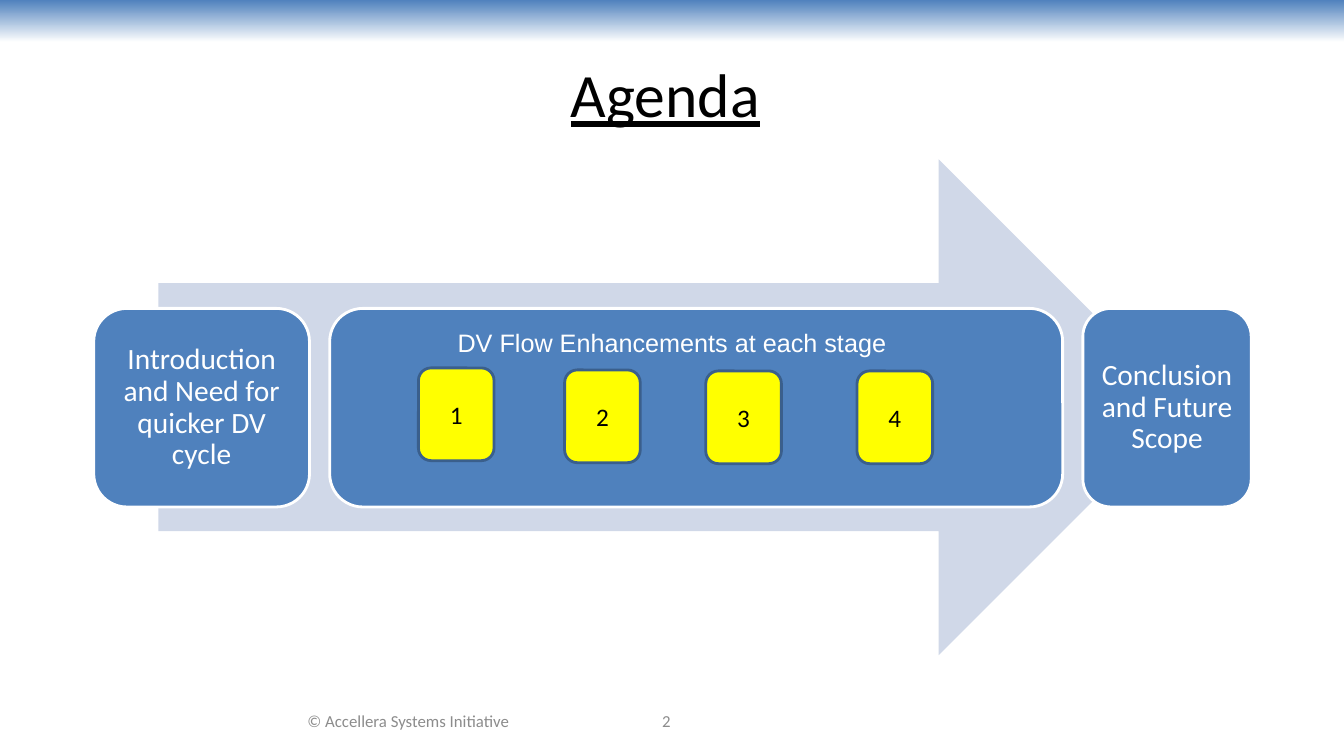
"""Build the agenda slide: a process arrow with three stages and four numbered steps."""
from dataclasses import dataclass

from pptx import Presentation
from pptx.dml.color import RGBColor
from pptx.enum.shapes import MSO_SHAPE as Shape
from pptx.enum.text import MSO_ANCHOR as Anchor, PP_ALIGN as Align
from pptx.util import Emu, Pt

PX = 9144
BLUE, WHITE, BLACK, GREY = "4F81BD", "FFFFFF", "000000", "8C8C8C"
PALE, YELLOW, NAVY = "D0D8E8", "FFFF00", "3A5F8C"


@dataclass
class TextStyle:
    """Look of a single paragraph."""
    size: int
    color: str
    font: str = "Calibri"
    align: Align = Align.CENTER
    anchor: Anchor = Anchor.MIDDLE
    underline: bool = False
    spacing: float = 1.0


@dataclass
class Box:
    """Filled preset shape, placed in px."""
    left: int
    top: int
    width: int
    height: int
    fill: str
    line: str = ""
    text: str = ""
    kind: Shape = Shape.ROUNDED_RECTANGLE


@dataclass
class Label:
    """Free-standing text, placed in px."""
    left: int
    top: int
    width: int
    height: int
    text: str
    style: TextStyle


STAGE = TextStyle(21, WHITE, spacing=0.9)
STEP = TextStyle(18, BLACK)
FOOTER = TextStyle(12, GREY)

ARROW = Box(157, 158, 1020, 492, PALE, kind=Shape.RIGHT_ARROW)
STAGES = [
    Box(left, 306, width, 197, BLUE, WHITE, text)
    for left, width, text in (
        (93, 214, "Introduction and Need for quicker DV cycle"),
        (327, 727, ""),
        (1074, 167, "Conclusion and Future Scope"),
    )
]
STEPS = [
    Box(left, top, 75, 92, YELLOW, NAVY, str(number))
    for number, (left, top) in enumerate(
        ((415, 365), (560, 367), (700, 368), (850, 368)), start=1)
]
LABELS = [
    Label(60, 30, 1200, 125, "Agenda", TextStyle(44, BLACK, underline=True)),
    Label(244, 695, 322, 40, "© Accellera Systems Initiative", FOOTER),
    Label(533, 695, 256, 40, "2", FOOTER),
    Label(444, 320, 460, 40, "DV Flow Enhancements at each stage",
          TextStyle(18, WHITE, "Arial", Align.LEFT, Anchor.TOP)),
]


def px(value: int) -> Emu:
    """Turn px into EMU."""
    return Emu(value * PX)


def rgb(color: str) -> RGBColor:
    """Turn a hex string into a colour."""
    return RGBColor.from_string(color)


def write(tf, text: str, style: TextStyle) -> None:
    """Fill a text frame with one styled paragraph."""
    tf.word_wrap = True
    tf.vertical_anchor = style.anchor
    tf.text = text
    p = tf.paragraphs[0]
    p.alignment = style.align
    p.line_spacing = style.spacing
    font = p.runs[0].font
    font.name, font.size = style.font, Pt(style.size)
    font.color.rgb = rgb(style.color)
    font.underline = style.underline


def add_box(s, box: Box, style: TextStyle = STAGE, inset: int = 9):
    """Draw a box with its text and return it."""
    sp = s.shapes.add_shape(box.kind, px(box.left), px(box.top),
                            px(box.width), px(box.height))
    sp.shadow.inherit = False
    sp.fill.solid()
    sp.fill.fore_color.rgb = rgb(box.fill)
    if box.line:
        sp.line.color.rgb = rgb(box.line)
        sp.line.width = Pt(2)
    else:
        sp.line.fill.background()
    if box.text:
        tf = sp.text_frame
        tf.margin_left = tf.margin_right = px(inset)
        tf.margin_top = tf.margin_bottom = px(inset)
        write(tf, box.text, style)
    return sp


def add_label(s, label: Label) -> None:
    """Draw a text box."""
    sp = s.shapes.add_textbox(px(label.left), px(label.top),
                              px(label.width), px(label.height))
    write(sp.text_frame, label.text, label.style)


def add_banner(s) -> None:
    """Draw the band that fades from blue to white along the top edge."""
    sp = add_box(s, Box(0, 0, 1333, 42, BLUE, kind=Shape.RECTANGLE))
    sp.fill.gradient()
    sp.fill.gradient_angle = 270
    for stop, position, color in zip(sp.fill.gradient_stops, (0, 1), (BLUE, WHITE)):
        stop.position = position
        stop.color.rgb = rgb(color)


def main() -> None:
    """Build and save the slide."""
    prs = Presentation()
    prs.slide_width, prs.slide_height = px(1333), px(750)
    s = prs.slides.add_slide(prs.slide_layouts[6])
    add_banner(s)
    add_box(s, ARROW)
    for stage in STAGES:
        add_box(s, stage)
    for step in STEPS:
        add_box(s, step, STEP, inset=5)
    for label in LABELS:
        add_label(s, label)
    prs.save("out.pptx")


if __name__ == "__main__":
    main()
